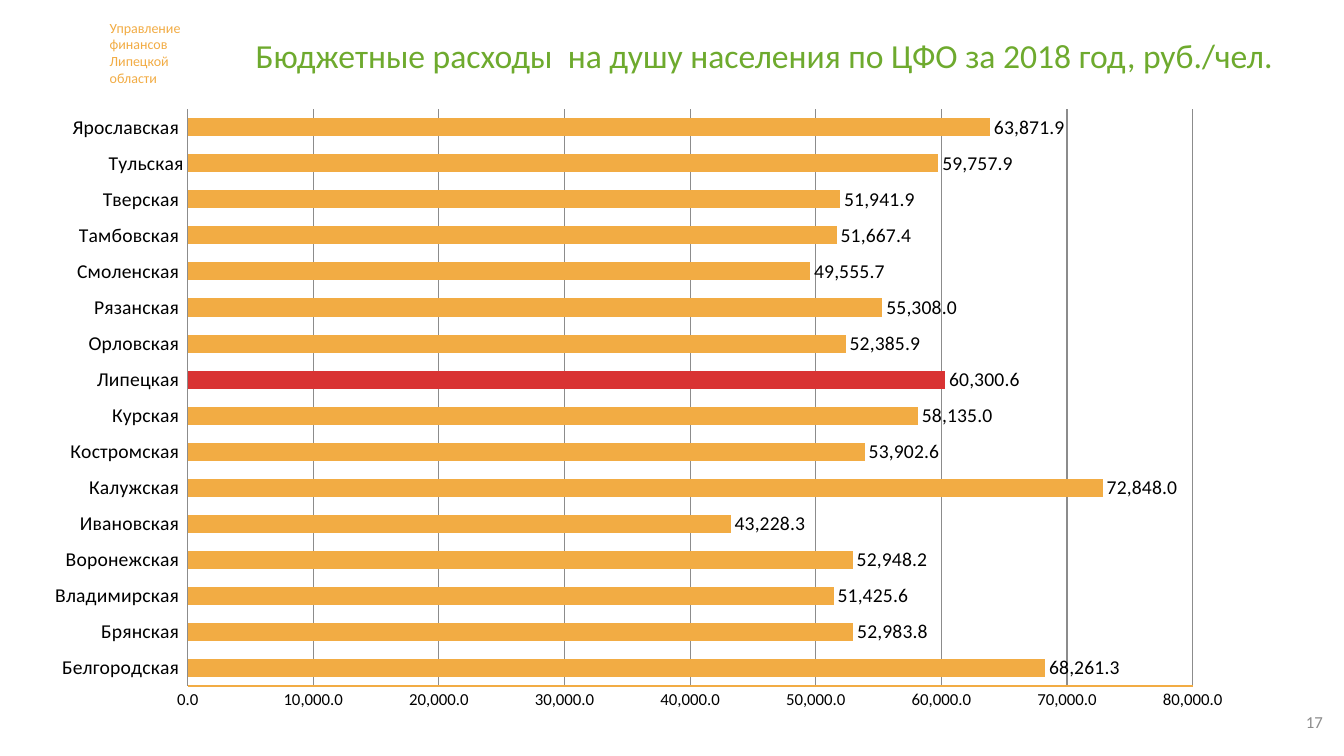
from lxml import etree
from pptx import Presentation
from pptx.chart.data import CategoryChartData
from pptx.dml.color import RGBColor
from pptx.enum.chart import XL_CHART_TYPE, XL_LABEL_POSITION, XL_TICK_MARK
from pptx.enum.text import MSO_ANCHOR, PP_ALIGN
from pptx.oxml.ns import qn
from pptx.util import Inches, Pt

BAR_CLUSTERED = XL_CHART_TYPE.BAR_CLUSTERED
OUTSIDE_END = XL_LABEL_POSITION.OUTSIDE_END
NO_TICK = XL_TICK_MARK.NONE
TOP, MIDDLE = MSO_ANCHOR.TOP, MSO_ANCHOR.MIDDLE
LEFT, CENTER, RIGHT = PP_ALIGN.LEFT, PP_ALIGN.CENTER, PP_ALIGN.RIGHT

ORANGE = RGBColor(0xF2, 0xAC, 0x44)
GREEN = RGBColor(0x6E, 0xAA, 0x2E)
RED = RGBColor(0xD9, 0x33, 0x33)
GRAY = RGBColor(0x8C, 0x8C, 0x8C)
BLACK = RGBColor(0, 0, 0)

FONT = "Calibri"
NUMBER_FORMAT = "#,##0.0"
HIGHLIGHT = "Липецкая "
SPENDING = {
    "Белгородская ": 68261.3,
    "Брянская ": 52983.8,
    "Владимирская ": 51425.6,
    "Воронежская ": 52948.2,
    "Ивановская ": 43228.3,
    "Калужская ": 72848,
    "Костромская ": 53902.6,
    "Курская ": 58135,
    HIGHLIGHT: 60300.6,
    "Орловская ": 52385.9,
    "Рязанская ": 55308,
    "Смоленская ": 49555.7,
    "Тамбовская ": 51667.4,
    "Тверская ": 51941.9,
    "Тульская": 59757.9,
    "Ярославская ": 63871.9,
}
PLOT_LAYOUT = {"x": 0.13, "y": 0.02, "w": 0.83, "h": 0.92}


def set_font(font, size, color):
    """Apply the slide font with a size and colour."""
    for name, value in {"name": FONT, "size": Pt(size), "bold": False}.items():
        setattr(font, name, value)
    font.color.rgb = color


def fill_text(shape, text, size, color, align, anchor):
    """Write one formatted paragraph into a shape."""
    frame = shape.text_frame
    for name, value in {"word_wrap": True, "vertical_anchor": anchor}.items():
        setattr(frame, name, value)
    para = frame.paragraphs[0]
    para.alignment = align
    span = para.add_run()
    span.text = text
    set_font(span.font, size, color)


def add_label(slide, box, *text_format):
    """Add a text box in the given box."""
    fill_text(slide.shapes.add_textbox(*map(Inches, box)), *text_format)


def add_title(slide, box, text):
    """Place and format the title placeholder."""
    title = slide.shapes.title
    for name, value in zip(("left", "top", "width", "height"), box):
        setattr(title, name, Inches(value))
    fill_text(title, text, 24, GREEN, CENTER, MIDDLE)
    title.text_frame.paragraphs[0].line_spacing = 0.9


def set_plot_layout(chart):
    """Fix the inner plot area as fractions of the chart."""
    plot_area = chart._chartSpace.chart.plotArea
    for old in plot_area.findall(qn("c:layout")):
        plot_area.remove(old)
    layout = etree.Element(qn("c:layout"))
    manual = etree.SubElement(layout, qn("c:manualLayout"))
    values = {"layoutTarget": "inner", "xMode": "edge", "yMode": "edge", **PLOT_LAYOUT}
    for name, value in values.items():
        etree.SubElement(manual, qn(f"c:{name}")).set("val", str(value))
    plot_area.insert(0, layout)


def format_axes(chart):
    """Format both axes and the gridlines."""
    for axis, size, color in ((chart.category_axis, 14, GRAY), (chart.value_axis, 12, ORANGE)):
        axis.major_tick_mark = axis.minor_tick_mark = NO_TICK
        set_font(axis.tick_labels.font, size, BLACK)
        axis.format.line.color.rgb = color
        axis.format.line.width = Pt(0.75)
    axis = chart.value_axis
    scale = {"minimum_scale": 0, "maximum_scale": 80000, "major_unit": 10000,
             "has_major_gridlines": True}
    for name, value in scale.items():
        setattr(axis, name, value)
    axis.major_gridlines.format.line.color.rgb = GRAY
    axis.major_gridlines.format.line.width = Pt(0.75)
    axis.tick_labels.number_format = NUMBER_FORMAT
    axis.tick_labels.number_format_is_linked = False


def add_spending_chart(slide, box):
    """Add the bar chart of regional spending per person."""
    data = CategoryChartData(number_format=NUMBER_FORMAT)
    data.categories = list(SPENDING)
    data.add_series("Series 1", list(SPENDING.values()))
    chart = slide.shapes.add_chart(BAR_CLUSTERED, *map(Inches, box), data).chart
    chart.has_title = chart.has_legend = False
    set_font(chart.font, 18, BLACK)
    set_plot_layout(chart)
    format_axes(chart)

    plot = chart.plots[0]
    for name, value in {"gap_width": 100, "vary_by_categories": False,
                        "has_data_labels": True}.items():
        setattr(plot, name, value)
    labels = plot.data_labels
    for name, value in {"show_value": True, "number_format": NUMBER_FORMAT,
                        "number_format_is_linked": False, "position": OUTSIDE_END}.items():
        setattr(labels, name, value)
    set_font(labels.font, 14, BLACK)

    series = plot.series[0]
    point = series.points[list(SPENDING).index(HIGHLIGHT)]
    for bar, color in ((series, ORANGE), (point, RED)):
        bar.format.fill.solid()
        bar.format.fill.fore_color.rgb = color


def main():
    """Build and save the slide."""
    deck = Presentation()
    deck.slide_width, deck.slide_height = Inches(13.33), Inches(7.5)
    slide = deck.slides.add_slide(deck.slide_layouts[5])
    add_label(slide, (0.99, 0.14, 0.97, 0.77), "Управление финансов Липецкой области",
              10, ORANGE, LEFT, TOP)
    add_title(slide, (2.1, 0.25, 10.96, 0.64),
              "Бюджетные расходы  на душу населения по ЦФО за 2018 год, руб./чел.")
    add_spending_chart(slide, (0.3, 0.96, 12.01, 6.22))
    add_label(slide, (10.11, 6.96, 3.11, 0.4), "17", 12, GRAY, RIGHT, MIDDLE)
    deck.save("out.pptx")


if __name__ == "__main__":
    main()
